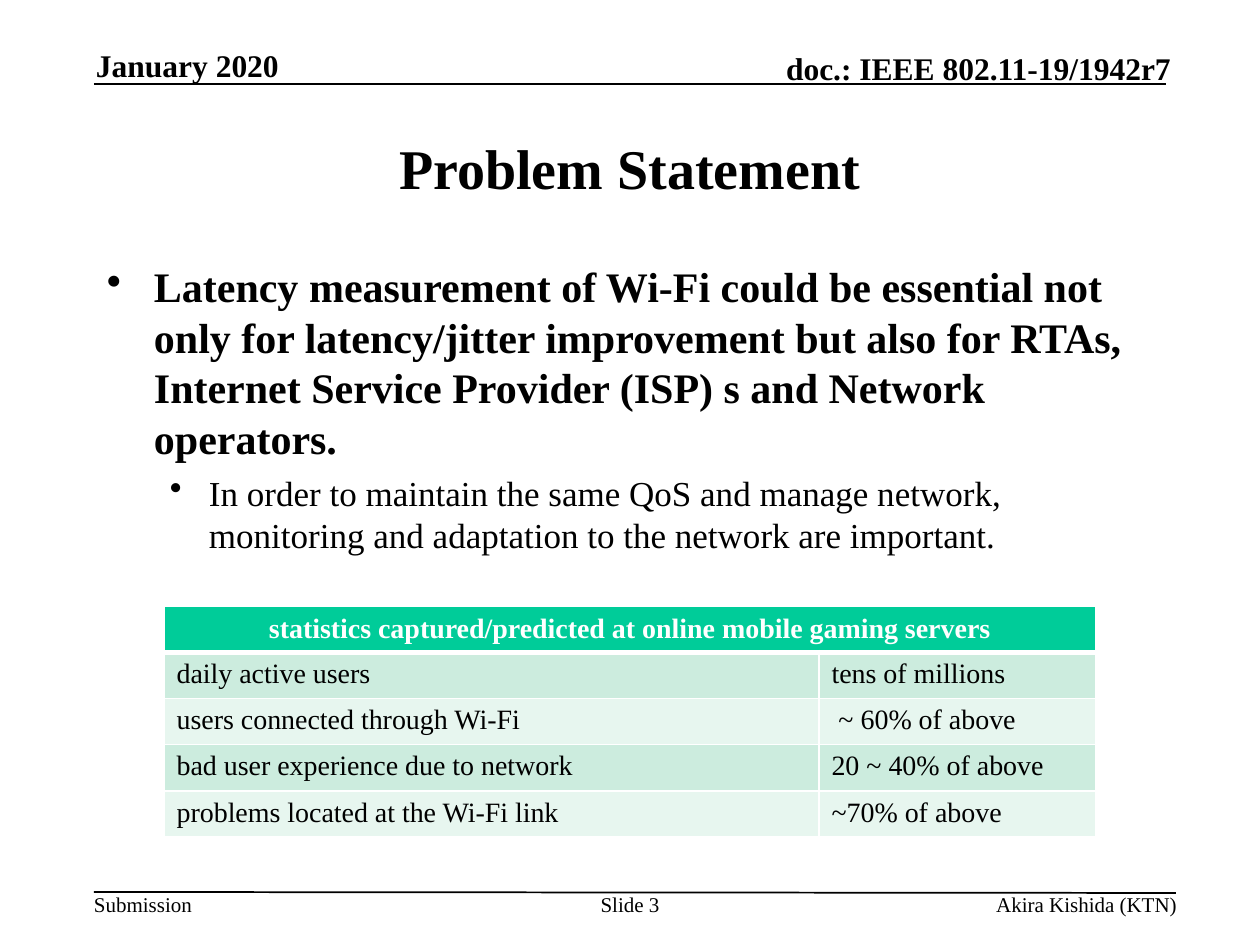
from dataclasses import dataclass, field
from typing import Any

from lxml.etree import SubElement
from pptx import Presentation
from pptx.dml.color import RGBColor
from pptx.enum.shapes import MSO_CONNECTOR
from pptx.enum.text import MSO_ANCHOR, PP_ALIGN
from pptx.oxml.ns import qn
from pptx.util import Emu, Pt

PIXELS_PER_INCH = 126
FONT = "Times New Roman"
COLORS = {
    "text": "000000",
    "white": "FFFFFF",
    "header": "00CC99",
    "band_dark": "CCECDE",
    "band_light": "E7F6EF",
}


@dataclass
class Line:
    text: str
    size: int
    bold: bool = False
    align: Any = PP_ALIGN.LEFT
    color: str = "text"
    level: int = 0
    space_before: int = 0
    bullet_left: int = 0
    bullet_hang: int = 0


@dataclass
class TextBlock:
    box: tuple[int, int, int, int]
    lines: list[Line]
    anchor: Any = MSO_ANCHOR.TOP
    margins: tuple[int, int] = (0, 0)
    wrap: bool = True


@dataclass
class Rule:
    start: tuple[int, int]
    end: tuple[int, int]


@dataclass
class StatisticsTable:
    origin: tuple[int, int]
    column_widths: list[int]
    row_height: int
    title: str
    rows: list[tuple[str, str]] = field(default_factory=list)


def px(value: int) -> Emu:
    return Emu(round(value * 914400 / PIXELS_PER_INCH))


def color(name: str) -> RGBColor:
    return RGBColor.from_string(COLORS[name])


def apply_format(target: Any, values: dict[str, Any]) -> None:
    for name, value in values.items():
        setattr(target, name, value)


def add_bullet(paragraph: Any, line: Line) -> None:
    properties = paragraph._p.get_or_add_pPr()
    properties.set("marL", str(px(line.bullet_left)))
    properties.set("indent", str(-px(line.bullet_hang)))
    bullet_color = SubElement(properties, qn("a:buClr"))
    SubElement(bullet_color, qn("a:srgbClr"), val=COLORS[line.color])
    SubElement(properties, qn("a:buChar"), char="•")


def write_line(paragraph: Any, line: Line) -> None:
    if line.bullet_left:
        add_bullet(paragraph, line)
    apply_format(paragraph, {"alignment": line.align, "level": line.level})
    if line.space_before:
        paragraph.space_before = Pt(line.space_before)
    run = paragraph.add_run()
    run.text = line.text
    apply_format(run.font, {"name": FONT, "size": Pt(line.size), "bold": line.bold})
    run.font.color.rgb = color(line.color)


def draw_text(slide: Any, block: TextBlock) -> None:
    frame = slide.shapes.add_textbox(*map(px, block.box)).text_frame
    horizontal, vertical = map(px, block.margins)
    apply_format(frame, {
        "word_wrap": block.wrap,
        "vertical_anchor": block.anchor,
        "margin_left": horizontal,
        "margin_right": horizontal,
        "margin_top": vertical,
        "margin_bottom": vertical,
    })
    for index, line in enumerate(block.lines):
        write_line(frame.add_paragraph() if index else frame.paragraphs[0], line)


def draw_rule(slide: Any, rule: Rule) -> None:
    connector = slide.shapes.add_connector(
        MSO_CONNECTOR.STRAIGHT, *map(px, rule.start + rule.end))
    connector.line.width = Pt(1)
    connector.line.color.rgb = color("text")
    SubElement(connector._element.spPr, qn("a:effectLst"))


def format_cell(cell: Any, fill: str, bottom_width: int = 1) -> None:
    properties = cell._tc.get_or_add_tcPr()
    widths = {"a:lnL": 1, "a:lnR": 1, "a:lnT": 1, "a:lnB": bottom_width}
    for tag, width in widths.items():
        border = SubElement(properties, qn(tag), w=str(Pt(width)))
        border_fill = SubElement(border, qn("a:solidFill"))
        SubElement(border_fill, qn("a:srgbClr"), val=COLORS["white"])
    cell.fill.solid()
    cell.fill.fore_color.rgb = color(fill)


def draw_table(slide: Any, statistics: StatisticsTable) -> None:
    row_count = len(statistics.rows) + 1
    size = (sum(statistics.column_widths), statistics.row_height * row_count)
    table = slide.shapes.add_table(
        row_count, len(statistics.column_widths),
        *map(px, statistics.origin + size)).table
    for column, width in zip(table.columns, statistics.column_widths):
        column.width = px(width)

    header = table.cell(0, 0)
    header.merge(table.cell(0, len(statistics.column_widths) - 1))
    header.vertical_anchor = MSO_ANCHOR.MIDDLE
    write_line(header.text_frame.paragraphs[0],
               Line(statistics.title, 16, True, PP_ALIGN.CENTER, "white"))
    for cell in table.rows[0].cells:
        format_cell(cell, "header", 3)

    for row_index, row in enumerate(statistics.rows, 1):
        fill = "band_dark" if row_index % 2 else "band_light"
        for column_index, text in enumerate(row):
            cell = table.cell(row_index, column_index)
            write_line(cell.text_frame.paragraphs[0], Line(text, 16))
            format_cell(cell, fill)


RULES = [Rule((94, 84), (1166, 84)), Rule((94, 892), (1176, 893))]

TEXT_BLOCKS = [
    TextBlock((94, 892, 98, 25), [Line("Submission", 12)], wrap=False),
    TextBlock((689, 49, 482, 38),
              [Line("doc.: IEEE 802.11-19/1942r7", 18, True, PP_ALIGN.RIGHT)],
              MSO_ANCHOR.BOTTOM),
    TextBlock((94, 94, 1072, 147),
              [Line("Problem Statement", 32, True, PP_ALIGN.CENTER)],
              MSO_ANCHOR.MIDDLE, (13, 6)),
    TextBlock((94, 255, 1072, 663), [
        Line("Latency measurement of Wi-Fi could be essential not only for "
             "latency/jitter improvement but also for RTAs, Internet Service "
             "Provider (ISP) s and Network operators.",
             24, True, bullet_left=47, bullet_hang=47),
        Line("In order to maintain the same QoS and manage network, "
             "monitoring and adaptation to the network are important.",
             20, level=1, space_before=5, bullet_left=102, bullet_hang=39),
    ], margins=(13, 6)),
    TextBlock((575, 892, 110, 50), [Line("Slide 3", 12, align=PP_ALIGN.CENTER)]),
    TextBlock((738, 892, 439, 25),
              [Line("Akira Kishida (KTN)", 12, align=PP_ALIGN.RIGHT)]),
    TextBlock((96, 46, 258, 38), [Line("January 2020", 18, True)], MSO_ANCHOR.BOTTOM),
]

STATISTICS = StatisticsTable(
    (164, 606), [655, 277], 44,
    "statistics captured/predicted at online mobile gaming servers",
    [
        ("daily active users", "tens of millions"),
        ("users connected through Wi-Fi", " ~ 60% of above"),
        ("bad user experience due to network", "20 ~ 40% of above"),
        ("problems located at the Wi-Fi link", "~70% of above"),
    ])


def main() -> None:
    presentation = Presentation()
    apply_format(presentation, {"slide_width": px(1260), "slide_height": px(945)})
    slide = presentation.slides.add_slide(presentation.slide_layouts[6])
    for rule in RULES:
        draw_rule(slide, rule)
    for block in TEXT_BLOCKS:
        draw_text(slide, block)
    draw_table(slide, STATISTICS)
    presentation.save("out.pptx")


if __name__ == "__main__":
    main()
